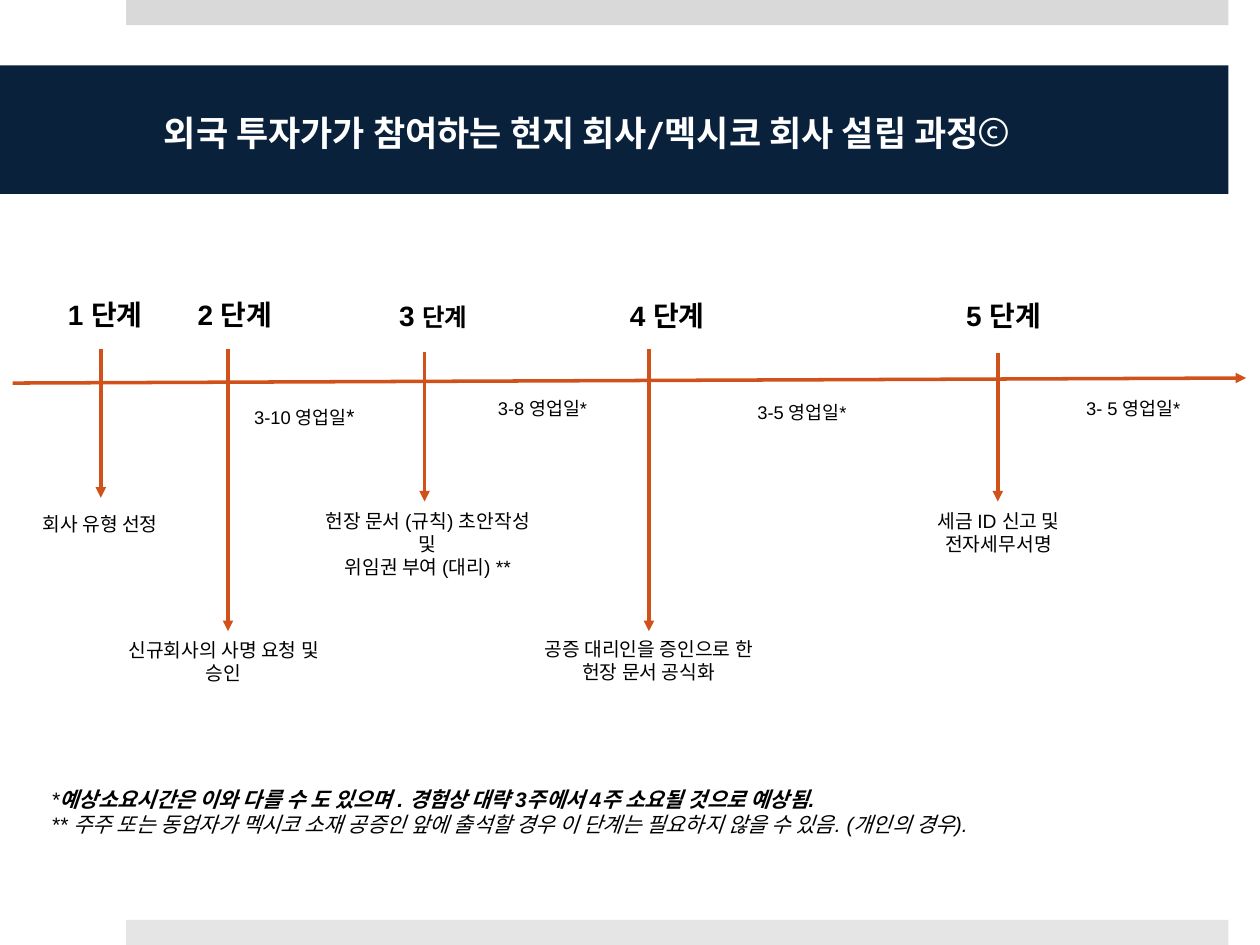
"""Build a slide showing the five steps of founding a company in Mexico."""
from lxml import etree
from pptx import Presentation
from pptx import util as u
from pptx.dml.color import RGBColor
from pptx.enum import shapes, text
from pptx.oxml import ns

NAVY = RGBColor(0x09, 0x21, 0x3B)
ORANGE = RGBColor(0xD0, 0x51, 0x1A)
TOP_GREY = RGBColor(0xD9, 0xD9, 0xD9)
BOTTOM_GREY = RGBColor(0xE5, 0xE5, 0xE5)
BLACK = RGBColor(0, 0, 0)
WHITE = RGBColor(0xFF, 0xFF, 0xFF)
LEFT, CENTER = text.PP_ALIGN.LEFT, text.PP_ALIGN.CENTER
RIGHT, JUSTIFY = text.PP_ALIGN.RIGHT, text.PP_ALIGN.JUSTIFY

LABEL_WIDTH = 78
STEPS = [
    ("1", 16, 88.6, 166.3, 57.6, 199.4, 284.4),
    ("2", 16, 162.7, 166.3, 130.3, 199.4, 360.7),
    ("3", 14, 274.3, 167, 242.6, 200.9, 286.6),
    ("4", 16, 409.7, 167, 370.8, 199.4, 360.7),
    ("5", 16, 601.9, 167, 570.2, 201.6, 286.6),
]
DESCRIPTIONS = [
    ((1.4, 289.4, 111.6, 20.9), ["회사 유형 선정"]),
    ((61.2, 361.4, 133.2, 33.8), ["신규회사의 사명 요청 및 승인"]),
    ((177.8, 287.3, 133.2, 60.5), ["헌장 문서 (규칙) 초안작성 및", "위임권 부여 (대리) **"]),
    ((296.6, 360.7, 148.3, 33.8), ["공증 대리인을 증인으로 한 헌장 문서 공식화"]),
    ((504, 287.3, 133.2, 33.8), ["세금 ID 신고 및 전자세무서명"]),
]
DURATIONS = [
    ((107.3, 226.8, 133.2, 21.6), "3-10 영업일", 12),
    ((243.4, 223.2, 133.2, 20.2), "3-8 영업일", 10.5),
    ((413.3, 225.4, 90, 20.2), "3-5 영업일", 10.5),
    ((602.6, 223.2, 90, 20.2), "3- 5 영업일", 10.5),
]
NOTES = [
    [("*", {}),
     ("예상소요시간은 이와 다를 수 도 있으며 . 경험상 대략 3주에서 4주 소요될 것으로 예상됨.", {"bold": True})],
    [("** 주주 또는 동업자가 멕시코 소재 공증인 앞에 출석할 경우 이 단계는 필요하지 않을 수 있음. (개인의 경우).", {})],
]


class SlideBuilder:
    """Hold the style and the current slide."""

    font = "Arial"
    line_width = 2

    def __init__(self, slide):
        self.slide = slide

    def fill_text(self, frame, paragraphs, size, align, color=BLACK, font=None, bold=False, italic=False):
        frame.word_wrap = True
        for index, runs in enumerate(paragraphs):
            paragraph = frame.add_paragraph() if index else frame.paragraphs[0]
            paragraph.alignment = align
            paragraph.font.name = font or self.font
            paragraph.font.size = u.Pt(size)
            paragraph.font.bold = bold
            paragraph.font.italic = italic
            paragraph.font.color.rgb = color
            for words, changes in runs:
                run = paragraph.add_run()
                run.text = words
                if "size" in changes:
                    run.font.size = u.Pt(changes["size"])
                if "bold" in changes:
                    run.font.bold = changes["bold"]

    def bar(self, box, color):
        shape = self.slide.shapes.add_shape(shapes.MSO_SHAPE.RECTANGLE, *map(u.Pt, box))
        shape.shadow.inherit = False
        shape.fill.solid()
        shape.fill.fore_color.rgb = color
        shape.line.fill.background()
        return shape

    def title(self, box, runs):
        frame = self.bar(box, NAVY).text_frame
        frame.margin_left, frame.margin_right = u.Pt(93.6), u.Pt(21.6)
        frame.vertical_anchor = text.MSO_ANCHOR.MIDDLE
        self.fill_text(frame, [runs], 20, LEFT, WHITE, "League Spartan", bold=True)

    def text_box(self, box, paragraphs, size, align, **style):
        frame = self.slide.shapes.add_textbox(*map(u.Pt, box)).text_frame
        self.fill_text(frame, paragraphs, size, align, **style)
        frame.auto_size = text.MSO_AUTO_SIZE.SHAPE_TO_FIT_TEXT

    def arrow(self, *ends):
        connector = self.slide.shapes.add_connector(shapes.MSO_CONNECTOR.STRAIGHT, *map(u.Pt, ends))
        connector.line.color.rgb = ORANGE
        connector.line.width = u.Pt(self.line_width)
        properties = connector._element.spPr
        etree.SubElement(properties.find(ns.qn("a:ln")), ns.qn("a:tailEnd"), type="triangle")
        etree.SubElement(properties, ns.qn("a:effectLst"))


def main():
    presentation = Presentation()
    presentation.slide_width, presentation.slide_height = u.Pt(720), u.Pt(540)
    slide = presentation.slides.add_slide(presentation.slide_layouts[6])
    builder = SlideBuilder(slide)

    builder.bar((72, 0, 630, 14.4), TOP_GREY)
    builder.bar((72, 525.6, 630, 14.4), BOTTOM_GREY)
    builder.title((0, 37.4, 702, 73.4), [
        ("외국 투자가가 참여하는 현지 회사/멕시코 회사 설립 과정", {}),
        ("©", {"size": 24, "bold": False}),
    ])
    builder.arrow(7.2, 218.9, 712.1, 216)
    for number, unit_size, right, label_top, x, top, bottom in STEPS:
        builder.text_box((right - LABEL_WIDTH, label_top, LABEL_WIDTH, 26.6),
                         [[(f"{number} ", {}), ("단계", {"size": unit_size})]],
                         16, RIGHT, bold=True)
        builder.arrow(x, top, x, bottom)
    for box, lines in DESCRIPTIONS:
        builder.text_box(box, [[(line, {})] for line in lines], 11, CENTER)
    for box, days, star_size in DURATIONS:
        builder.text_box(box, [[(days, {}), ("*", {"size": star_size})]], 10.5, CENTER)
    builder.text_box((22.3, 445.7, 547.9, 51.1), NOTES, 12, JUSTIFY, italic=True)
    presentation.save("out.pptx")


if __name__ == "__main__":
    main()
